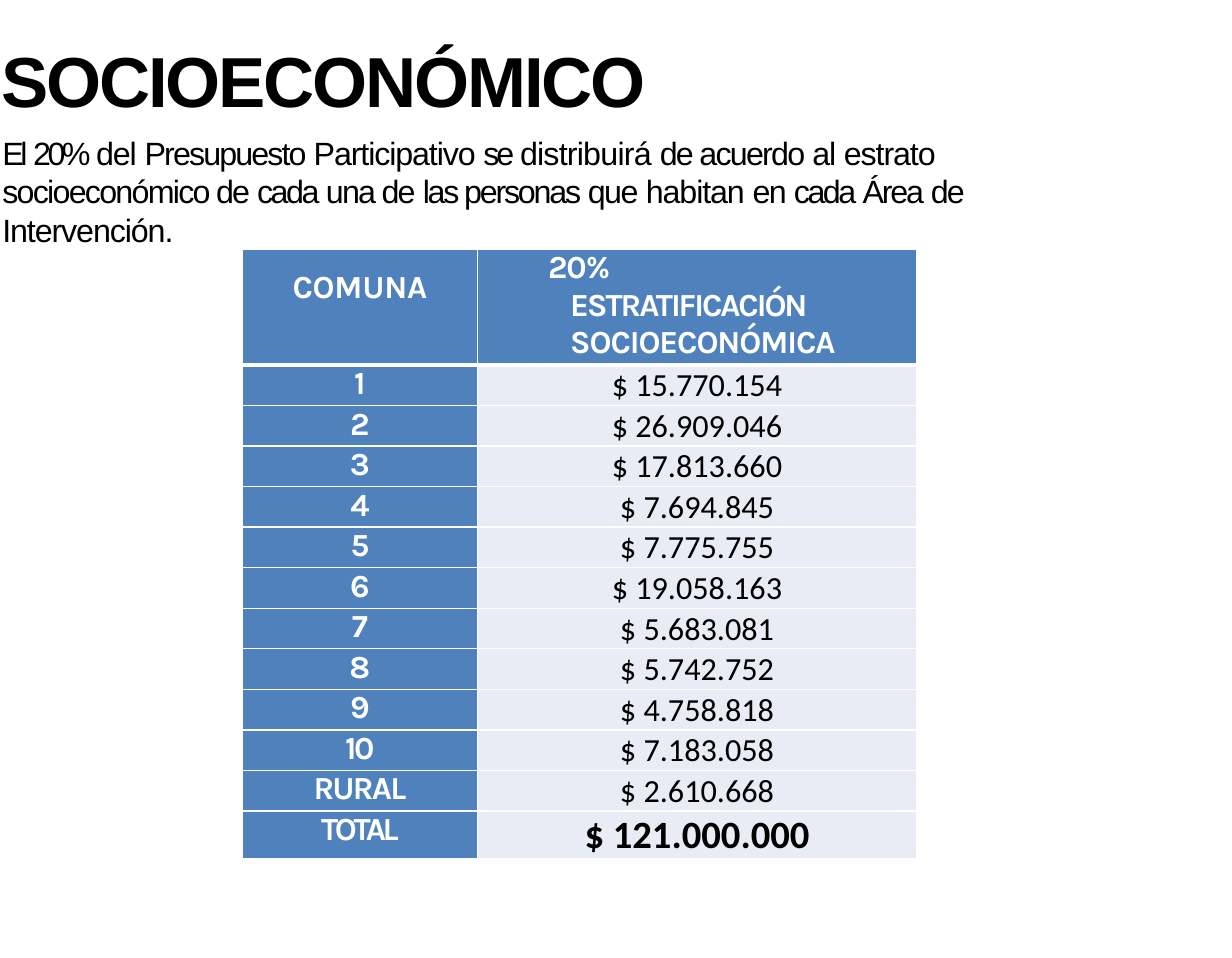
from pptx import Presentation
from pptx.dml.color import RGBColor
from pptx.enum.text import MSO_ANCHOR, PP_ALIGN
from pptx.oxml import parse_xml
from pptx.oxml.ns import nsdecls
from pptx.util import Inches, Pt

BLACK, WHITE, BLUE, PALE = "000000", "FFFFFF", "4F81BC", "E9ECF4"

# Each run is a text and its letter spacing in points.
TITLE = [("SOCIOECONÓMICO", -1.4)]
INTRO = [
    ("El ", -2.1), ("20% ", -2.2), ("del ", -0.7), ("Presupuesto ", -1.2),
    ("Participativo ", -0.7), ("se ", -2), ("distribuirá ", -0.5),
    ("de acuerdo ", -1.1), ("al ", -0.8), ("estrato ", -0.7),
    ("socioeconómico de ", -1.1), ("cada ", -1.6), ("una de ", -1.1),
    ("las personas ", -1.4), ("que ", -1), ("habitan ", -0.7), ("en ", -1.1),
    ("cada ", -1.6), ("Área ", -1.4), ("de ", -1.1), ("Intervención.", -0.7),
]
HEADS = [
    [("COMUNA", -0.2)],
    [("20%", -0.8), ("ESTRATIFICACIÓN", -1.3), ("SOCIOECONÓMICA", -0.7)],
]
ROWS = [
    ("1", 0, "$ 15.770.154"),
    ("2", 0, "$ 26.909.046"),
    ("3", 0, "$ 17.813.660"),
    ("4", 0, "$ 7.694.845"),
    ("5", 0, "$ 7.775.755"),
    ("6", 0, "$ 19.058.163"),
    ("7", 0, "$ 5.683.081"),
    ("8", 0, "$ 5.742.752"),
    ("9", 0, "$ 4.758.818"),
    ("10", -1.6, "$ 7.183.058"),
    ("RURAL", -1.1, "$ 2.610.668"),
    ("TOTAL", -2.1, "$ 121.000.000"),
]
WIDTHS = [2.03, 3.79]
HEIGHTS = [1.0] + [0.35] * (len(ROWS) - 1) + [0.41]


def paint(item, color):
    """Fill a cell or a font with a hex colour."""
    item.fill.solid()
    item.fill.fore_color.rgb = RGBColor.from_string(color)


def write(para, runs, font, size, color, bold, split=False):
    """Add runs to a paragraph, each on its own line if split."""
    for i, (text, gap) in enumerate(runs):
        if split and i:
            para.add_line_break()
        run = para.add_run()
        run.text = text
        run.font.name, run.font.size, run.font.bold = font, Pt(size), bold
        paint(run.font, color)
        if gap:
            run.font._element.set("spc", str(round(gap * 100)))


def indent(para, left, first=0):
    props = para._p.get_or_add_pPr()
    props.set("marL", str(Inches(left)))
    props.set("indent", str(Inches(first)))


def style(cell, color, top=1, bottom=1):
    """Set fill, margins and white borders, with widths in points."""
    props = cell._tc.get_or_add_tcPr()
    for side, width in zip("LRTB", (1, 1, top, bottom)):
        props.append(parse_xml(
            f'<a:ln{side} {nsdecls("a")} w="{Pt(width)}"><a:solidFill>'
            f'<a:srgbClr val="{WHITE}"/></a:solidFill></a:ln{side}>'))
    paint(cell, color)
    cell.margin_left = cell.margin_right = 0
    cell.margin_top = cell.margin_bottom = 0


def add_intro(slide):
    box = slide.shapes.add_textbox(
        Inches(0), Inches(0.1), Inches(8.78), Inches(2.05))
    frame = box.text_frame
    frame.word_wrap = True
    frame.vertical_anchor = MSO_ANCHOR.BOTTOM
    frame.margin_left = frame.margin_right = 0
    frame.margin_top = frame.margin_bottom = 0
    head = frame.paragraphs[0]
    indent(head, 0.01)
    write(head, TITLE, "Arial", 44, BLACK, True)
    body = frame.add_paragraph()
    indent(body, 0.02)
    body.space_before = Pt(7.4)
    write(body, INTRO, "Arial", 20, BLACK, False)


def add_grid(slide):
    grid = slide.shapes.add_table(
        len(HEIGHTS), len(WIDTHS), Inches(2.09), Inches(2.15),
        Inches(sum(WIDTHS)), Inches(sum(HEIGHTS))).table
    grid.horz_banding = False
    for col, width in zip(grid.columns, WIDTHS):
        col.width = Inches(width)
    for row, height in zip(grid.rows, HEIGHTS):
        row.height = Inches(height)

    for c, runs in enumerate(HEADS):
        cell = grid.cell(0, c)
        style(cell, BLUE, bottom=3)
        para = cell.text_frame.paragraphs[0]
        if c == 0:
            cell.margin_top = Inches(0.17)
            para.alignment = PP_ALIGN.CENTER
        else:
            para.alignment = PP_ALIGN.LEFT
            indent(para, 0.8, -0.19)
        write(para, runs, "Karla", 20, WHITE, True, split=True)

    for r, (area, gap, sum_) in enumerate(ROWS, 1):
        total = r == len(ROWS)
        name, value = grid.cell(r, 0), grid.cell(r, 1)
        for cell, color in ((name, BLUE), (value, PALE)):
            style(cell, color, top=3 if r == 1 else 1)
            cell.text_frame.paragraphs[0].alignment = PP_ALIGN.CENTER
        value.vertical_anchor = MSO_ANCHOR.MIDDLE
        value.margin_top = Inches(0.01)
        write(name.text_frame.paragraphs[0], [(area, gap)],
              "Karla", 20, WHITE, True)
        write(value.text_frame.paragraphs[0], [(sum_, 0)],
              "Calibri", 24 if total else 20, BLACK, total)


def main():
    deck = Presentation()
    deck.slide_width, deck.slide_height = Inches(10.63), Inches(8.27)
    slide = deck.slides.add_slide(deck.slide_layouts[6])
    add_intro(slide)
    add_grid(slide)
    deck.save("out.pptx")


if __name__ == "__main__":
    main()
